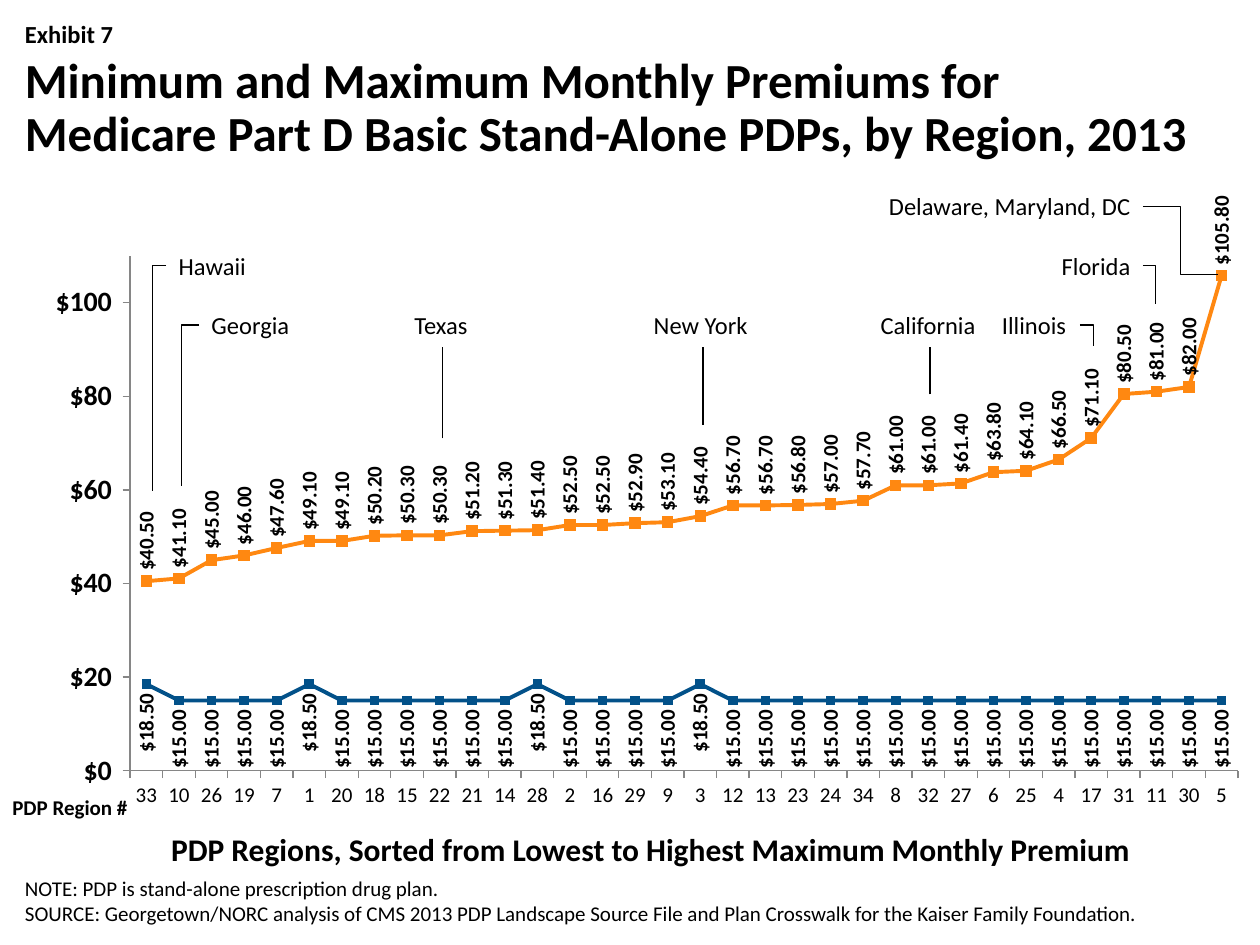
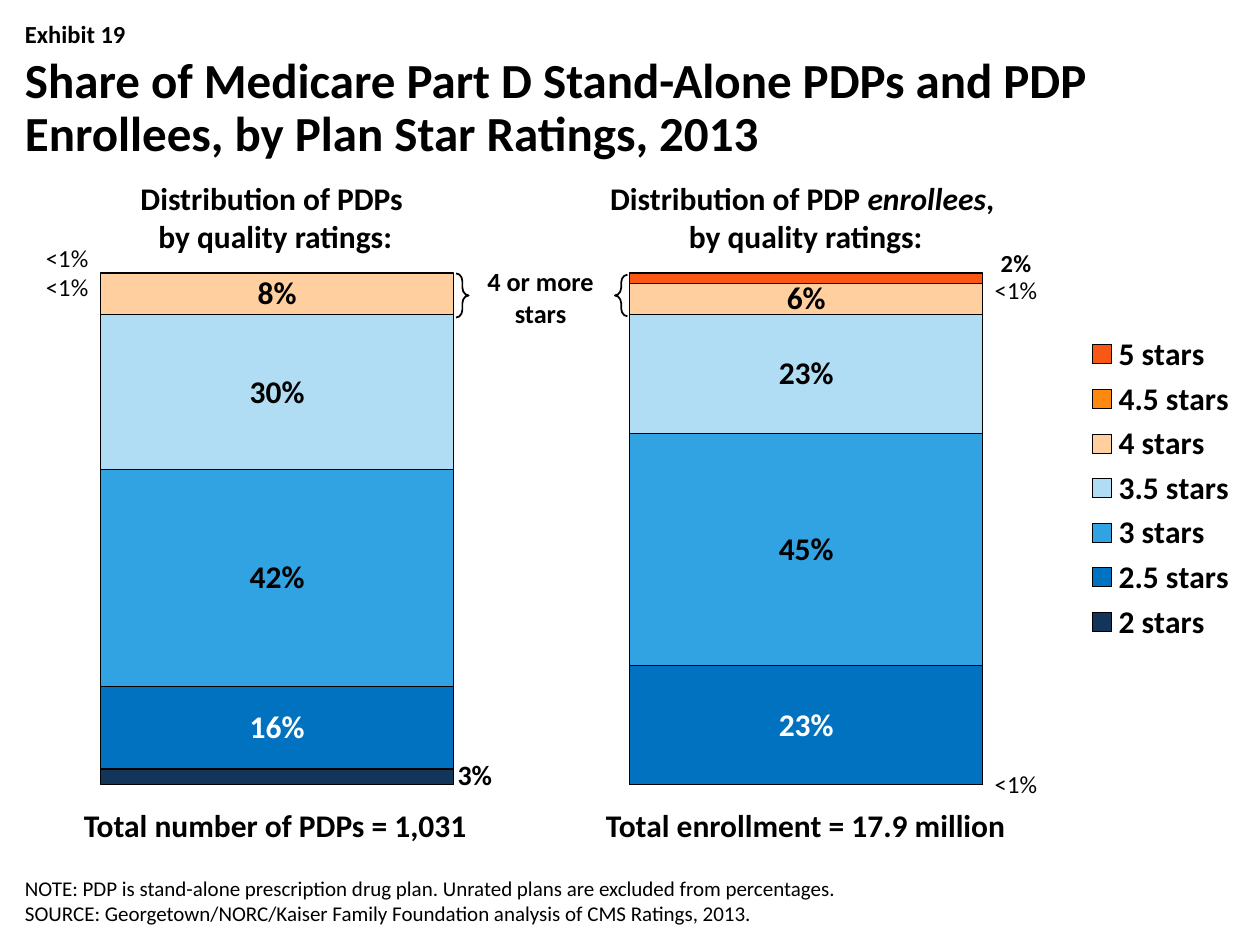
from pptx import Presentation
from pptx import util as u
from pptx.chart.data import CategoryChartData
from pptx.dml.color import RGBColor
from pptx.enum import chart as ch
from pptx.enum import shapes, text
from pptx.oxml import parse_xml
from pptx.oxml.ns import nsdecls, qn
from pptx.oxml.xmlchemy import OxmlElement

PX = 9144
FONT = "Calibri"
PLAIN_TABLE = "{2D5ABB26-0587-4C30-8999-92F81FD0307C}"
BLACK = RGBColor(0x00, 0x00, 0x00)
WHITE = RGBColor(0xFF, 0xFF, 0xFF)
AXIS_GRAY = RGBColor(0x86, 0x86, 0x86)
MINIMUM_BLUE = RGBColor(0x02, 0x51, 0x89)
MAXIMUM_ORANGE = RGBColor(0xFF, 0x88, 0x11)
LEFT, CENTER, RIGHT = text.PP_ALIGN.LEFT, text.PP_ALIGN.CENTER, text.PP_ALIGN.RIGHT

REGIONS = ("33 10 26 19 7 1 20 18 15 22 21 14 28 2 16 29 9 3 12 13 23 24 34 8 "
           "32 27 6 25 4 17 31 11 30 5").split()
HIGHER_MINIMUM_REGIONS = {"33", "1", "28", "3"}
MINIMUMS = [18.5 if region in HIGHER_MINIMUM_REGIONS else 15 for region in REGIONS]
MAXIMUMS = [40.5, 41.1, 45, 46, 47.6, 49.1, 49.1, 50.2, 50.3, 50.3, 51.2, 51.3,
            51.4, 52.5, 52.5, 52.9, 53.1, 54.4, 56.7, 56.7, 56.8, 57, 57.7, 61,
            61, 61.4, 63.8, 64.1, 66.5, 71.1, 80.5, 81, 82, 105.8]

STATE_LABELS = [
    ("Delaware, Maryland, DC", 689, 147, 218, RIGHT, False),
    ("Hawaii", 132, 194, 76, LEFT, True), ("Florida", 826, 194, 81, RIGHT, True),
    ("Georgia", 158, 241, 83, LEFT, True), ("Texas", 319, 241, 64, LEFT, False),
    ("New York", 509, 241, 97, LEFT, False), ("California", 689, 241, 98, LEFT, False),
    ("Illinois", 775, 241, 81, RIGHT, True),
]
STRAIGHT_LEADERS = [(351, 348), (558, 337), (738, 313)]
CORNER_LEADERS = [(132, 211, 121, 390), (158, 258, 144, 386),
                  (857, 258, 868, 275), (907, 211, 917, 241)]

STAR_RATINGS = [
    ("2 stars", (0.03, 0), RGBColor(0x13, 0x35, 0x59)),
    ("2.5 stars", (0.16, 0.23), RGBColor(0x00, 0x72, 0xC0)),
    ("3 stars", (0.42, 0.45), RGBColor(0x31, 0xA3, 0xE3)),
    ("3.5 stars", (0.3, 0.23), RGBColor(0xB0, 0xDD, 0xF4)),
    ("4 stars", (0.08, 0.06), RGBColor(0xFF, 0xCF, 0xA0)),
    ("4.5 stars", (0, 0), MAXIMUM_ORANGE),
    ("5 stars", (0, 0.02), RGBColor(0xFA, 0x57, 0x16)),
]
OUTSIDE_LABELS = [
    ("2 stars", 0, None, 16, 0.16, 0), ("2 stars", 1, "<1%", 14, 0.17, 0),
    ("4.5 stars", 0, "<1%", 14, -0.17, 0.02), ("4.5 stars", 1, "<1%", 14, 0.17, 0.01),
    ("5 stars", 0, "<1%", 14, -0.17, -0.02), ("5 stars", 1, None, 14, 0.17, -0.02),
]


def px(*lengths):
    return [u.Emu(length * PX) for length in lengths]


def style(font, size, bold=False, color=BLACK):
    font.name = FONT
    font.size = u.Pt(size)
    font.bold = bold
    font.color.rgb = color


def add_text(slide, box, lines, size, bold=False, align=LEFT, wrap=True,
             anchor=text.MSO_ANCHOR.TOP, spacing=None):
    frame = slide.shapes.add_textbox(*px(*box)).text_frame
    frame.word_wrap = wrap
    frame.vertical_anchor = anchor
    for index, line in enumerate(lines):
        paragraph = frame.add_paragraph() if index else frame.paragraphs[0]
        paragraph.text = line
        paragraph.alignment = align
        paragraph.line_spacing = spacing
        style(paragraph.font, size, bold)


def add_exhibit(deck, number, title, notes):
    slide = deck.slides.add_slide(deck.slide_layouts[6])
    add_text(slide, (10, 10, 980, 34), [f"Exhibit {number}"], 14, True)
    add_text(slide, (10, 40, 980, 100), [title], 28, True, spacing=0.9)
    add_text(slide, (10, 680, 910, 60), notes, 12, anchor=text.MSO_ANCHOR.BOTTOM)
    return slide


def add_leader(slide, ends, kind=shapes.MSO_CONNECTOR.STRAIGHT, corner=False):
    leader = slide.shapes.add_connector(kind, *px(*ends))
    leader.line.color.rgb = BLACK
    leader.line.width = u.Pt(0.75)
    properties = leader._element.spPr
    if corner:
        properties.find(qn("a:prstGeom")).set("prst", "bentConnector2")
    properties.append(OxmlElement("a:effectLst"))


def set_layout(parent, index, **settings):
    existing = parent.find(qn("c:layout"))
    if existing is not None:
        parent.remove(existing)
    items = "".join(f'<c:{key} val="{value}"/>' for key, value in settings.items())
    parent.insert(index, parse_xml(
        f'<c:layout {nsdecls("c")}><c:manualLayout>{items}</c:manualLayout></c:layout>'))


def add_chart(slide, kind, box, categories, series, number_format, plot_area, bold=False):
    data = CategoryChartData(number_format=number_format)
    data.categories = categories
    for name, values in series:
        data.add_series(name, values)
    chart = slide.shapes.add_chart(kind, *px(*box), data).chart
    chart.has_title = chart.has_legend = False
    style(chart.font, 18, bold)
    chart.value_axis.has_major_gridlines = False
    x, y, w, h = plot_area
    set_layout(chart._chartSpace.chart.plotArea, 0, layoutTarget="inner",
               xMode="edge", yMode="edge", x=x, y=y, w=w, h=h)
    return chart


def show_values(series, size, number_format, position, color=BLACK):
    labels = series.data_labels
    labels.show_value = True
    labels.number_format = number_format
    labels.number_format_is_linked = False
    labels.position = position
    style(labels.font, size, True, color)
    for leader_lines in labels._element.findall(qn("c:showLeaderLines")):
        leader_lines.set("val", "0")
    return labels


def style_axis(axis, size, bold):
    axis.major_tick_mark = ch.XL_TICK_MARK.OUTSIDE
    axis.minor_tick_mark = ch.XL_TICK_MARK.NONE
    axis.format.line.color.rgb = AXIS_GRAY
    style(axis.tick_labels.font, size, bold)


def add_premium_chart(slide):
    chart = add_chart(slide, ch.XL_CHART_TYPE.LINE_MARKERS, (33, 151, 950, 502), REGIONS,
                      [("Series 1", MINIMUMS), ("Series 2", MAXIMUMS)],
                      '"$"#,##0.00', (0.074, 0.104, 0.926, 0.814))
    style_axis(chart.category_axis, 12, False)
    dollars = chart.value_axis
    style_axis(dollars, 16, True)
    dollars.minimum_scale, dollars.maximum_scale, dollars.major_unit = 0, 110, 20
    dollars.tick_labels.number_format = r"\$#,##0_);[Red]\(\$#,##0\)"
    dollars.tick_labels.number_format_is_linked = False
    looks = [(MINIMUM_BLUE, 5, ch.XL_LABEL_POSITION.BELOW),
             (MAXIMUM_ORANGE, 6, ch.XL_LABEL_POSITION.ABOVE)]
    for premiums, (color, marker_size, position) in zip(chart.plots[0].series, looks):
        premiums.smooth = False
        premiums.format.line.color.rgb = color
        premiums.format.line.width = u.Pt(2.25)
        marker = premiums.marker
        marker.style, marker.size = ch.XL_MARKER_STYLE.SQUARE, marker_size
        marker.format.fill.solid()
        marker.format.fill.fore_color.rgb = color
        marker.format.line.color.rgb = color
        labels = show_values(premiums, 12, '"$"#,##0.00', position)
        body = labels._element.find(f".//{qn('a:bodyPr')}")
        body.set("rot", "-5400000")
        body.set("vert", "horz")


def add_rating_chart(slide):
    chart = add_chart(slide, ch.XL_CHART_TYPE.COLUMN_STACKED_100, (10, 100, 980, 575),
                      ["1", "2"], [(name, shares) for name, shares, _ in STAR_RATINGS],
                      "0%", (0, 0.203, 0.857, 0.706), True)
    chart.category_axis.visible = chart.value_axis.visible = False
    chart.value_axis.minimum_scale, chart.value_axis.maximum_scale = 0, 1
    columns = chart.plots[0]
    columns.gap_width, columns.overlap = 50, 100
    columns.vary_by_categories = False
    ratings = {rating.name: rating for rating in columns.series}
    for name, _, color in STAR_RATINGS:
        rating = ratings[name]
        rating.format.fill.solid()
        rating.format.fill.fore_color.rgb = color
        rating.format.line.color.rgb = BLACK
        rating.format.line.width = u.Pt(0.75)
        show_values(rating, 18, "0%", ch.XL_LABEL_POSITION.CENTER,
                    WHITE if name == "2.5 stars" else BLACK)
    for name, column, wording, size, dx, dy in OUTSIDE_LABELS:
        label = ratings[name].points[column].data_label
        if wording:
            paragraph = label.text_frame.paragraphs[0]
            paragraph.text = wording
            style(paragraph.runs[0].font, size)
        else:
            style(label.font, size, True)
        set_layout(label._get_or_add_dLbl(), 1, x=dx, y=dy)
    chart.has_legend = True
    legend = chart.legend
    legend.position = ch.XL_LEGEND_POSITION.RIGHT
    legend.include_in_layout = False
    style(legend.font, 18, True)
    set_layout(legend._element, 1, xMode="edge", yMode="edge", x=0.86, y=0.28, w=0.14, h=0.44)


def add_captions(slide, top, height, captions):
    table = slide.shapes.add_table(1, 2, *px(8, top, 842, height)).table
    table.first_row = table.horz_banding = False
    table._tbl.tblPr.find(qn("a:tableStyleId")).text = PLAIN_TABLE
    for cell, lines in zip(table.rows[0].cells, captions):
        cell.fill.background()
        for index, line in enumerate(lines):
            frame = cell.text_frame
            paragraph = frame.add_paragraph() if index else frame.paragraphs[0]
            paragraph.alignment = CENTER
            style(paragraph.font, 18, True)
            for part, italic in line:
                run = paragraph.add_run()
                run.text = part
                if italic:
                    run.font.italic = True


def add_brace(slide, box, rotation=0):
    brace = slide.shapes.add_shape(shapes.MSO_SHAPE.RIGHT_BRACE, *px(*box))
    brace.rotation = rotation
    brace.adjustments[0] = 0.625
    brace.shadow.inherit = False
    brace.fill.background()
    brace.line.color.rgb = BLACK
    brace.line.width = u.Pt(1)


def build_premiums(deck):
    slide = add_exhibit(
        deck, 7,
        "Minimum and Maximum Monthly Premiums for \v"
        "Medicare Part D Basic Stand-Alone PDPs, by Region, 2013",
        ["NOTE: PDP is stand-alone prescription drug plan.",
         "SOURCE: Georgetown/NORC analysis of CMS 2013 PDP Landscape Source File "
         "and Plan Crosswalk for the Kaiser Family Foundation."])
    add_premium_chart(slide)
    add_text(slide, (125, 654, 783, 40),
             ["PDP Regions, Sorted from Lowest to Highest Maximum Monthly Premium"],
             18, True, CENTER, False)
    add_text(slide, (0, 626, 116, 30), ["PDP Region #"], 12, True)
    for state, left, top, width, align, wrap in STATE_LABELS:
        add_text(slide, (left, top, width, 34), [state], 14, align=align, wrap=wrap)
    for x, bottom in STRAIGHT_LEADERS:
        add_leader(slide, (x, bottom, x, 275))
    for ends in CORNER_LEADERS:
        add_leader(slide, ends, shapes.MSO_CONNECTOR.ELBOW, corner=True)
    add_leader(slide, (907, 164, 967, 218), shapes.MSO_CONNECTOR.ELBOW)


def build_ratings(deck):
    slide = add_exhibit(
        deck, 19,
        "Share of Medicare Part D Stand-Alone PDPs and PDP Enrollees, by Plan Star Ratings, 2013",
        ["NOTE: PDP is stand-alone prescription drug plan. "
         "Unrated plans are excluded from percentages.\v"
         "SOURCE: Georgetown/NORC/Kaiser Family Foundation analysis of CMS Ratings, 2013."])
    add_rating_chart(slide)
    add_brace(slide, (362, 217, 10, 35))
    add_brace(slide, (488, 218, 10, 33), 180)
    add_text(slide, (375, 206, 108, 61), ["4 or more stars"], 15, True, CENTER)
    add_captions(slide, 636, 41, [[[("Total number of PDPs = 1,031", False)]],
                                  [[("Total enrollment = 17.9 million", False)]]])
    by_quality = [("by quality ratings:", False)]
    add_captions(slide, 138, 70, [
        [[("Distribution of PDPs ", False)], by_quality],
        [[("Distribution of PDP ", False), ("enrollees", True), (", ", False)], by_quality]])


def main():
    deck = Presentation()
    deck.slide_width, deck.slide_height = px(1000, 750)
    build_premiums(deck)
    build_ratings(deck)
    deck.save("out.pptx")


if __name__ == "__main__":
    main()
